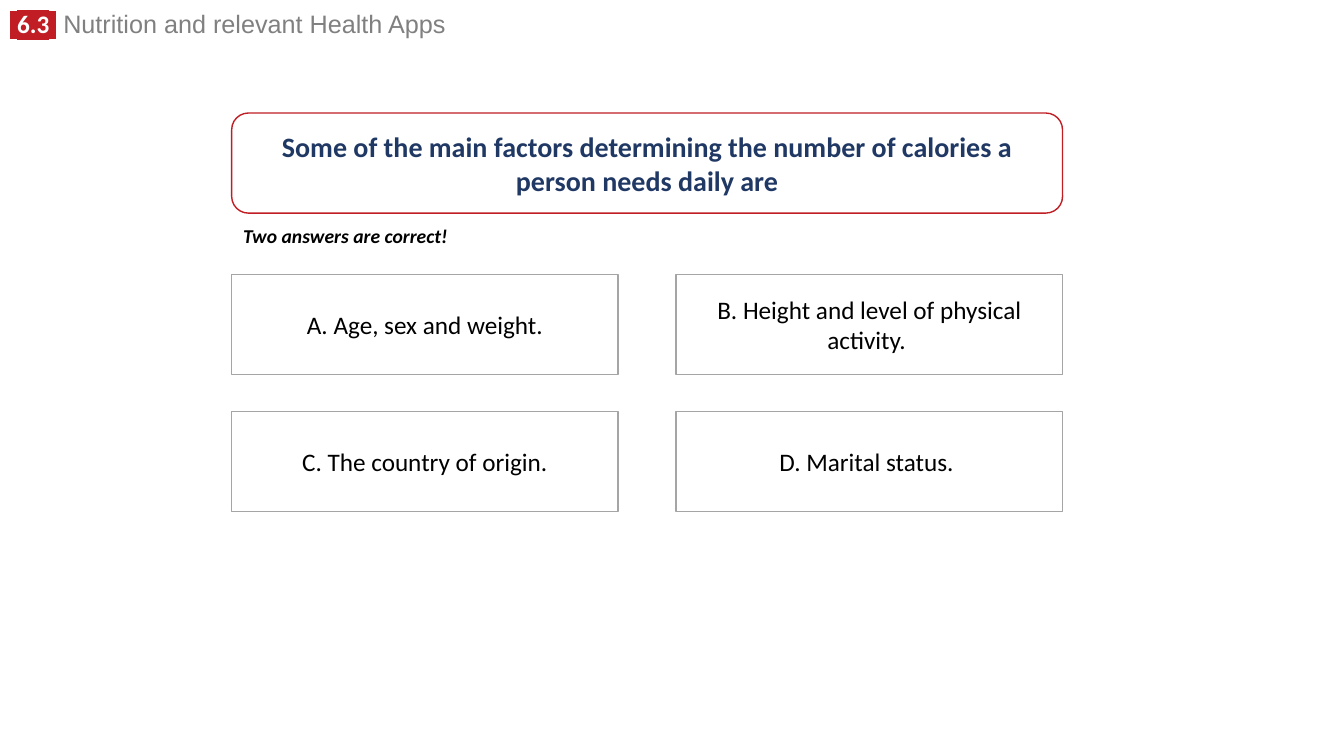
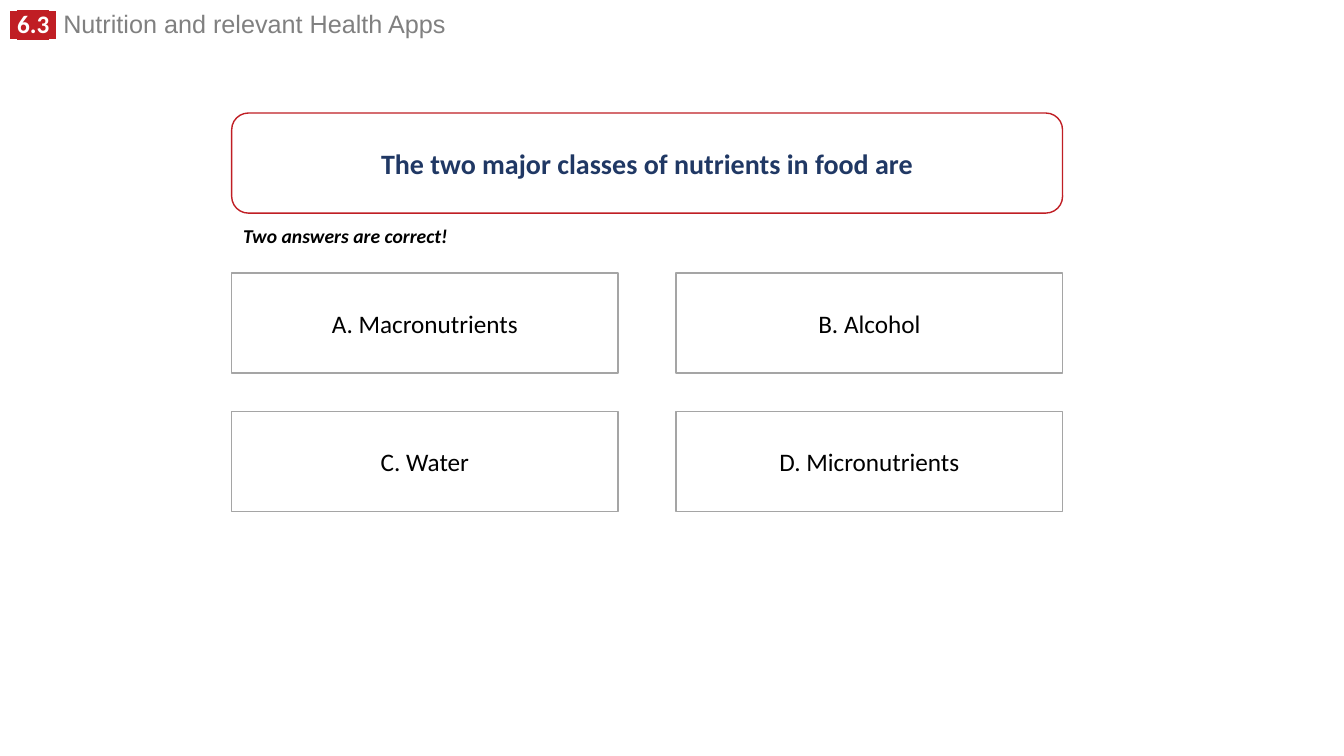
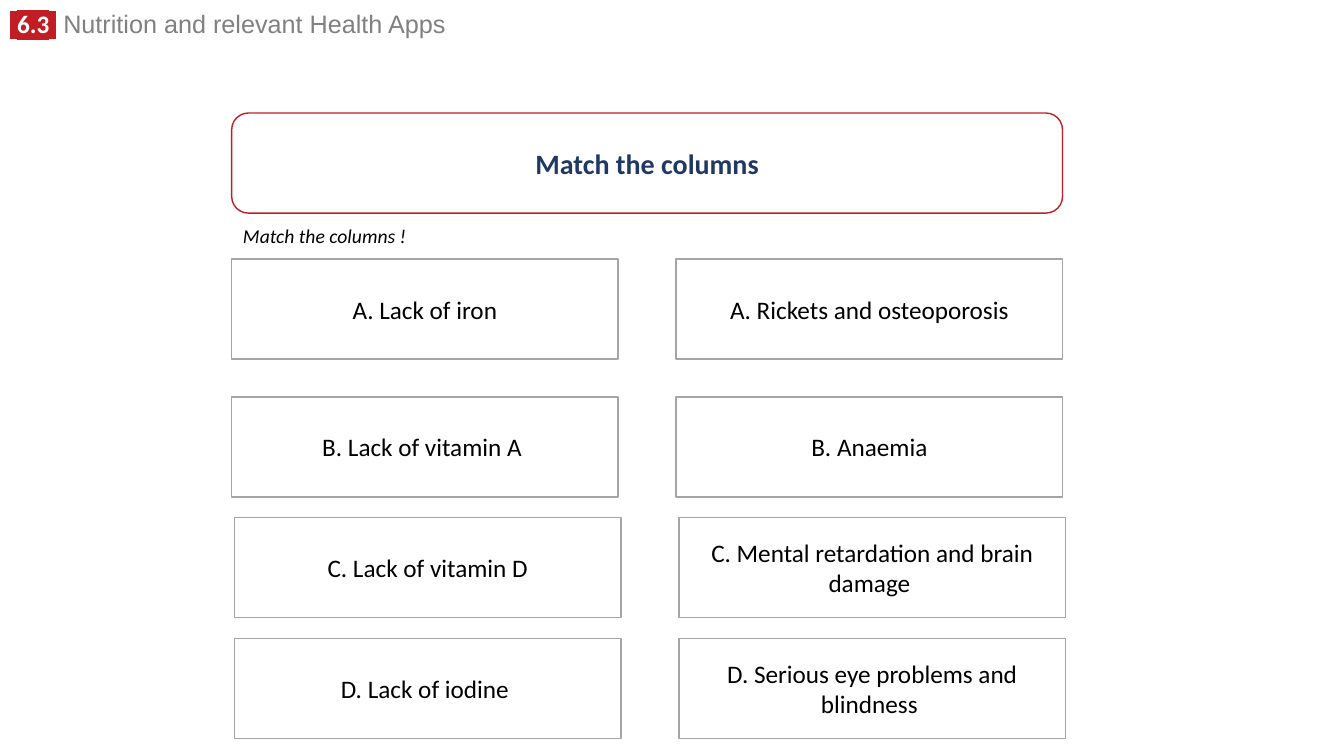
from pptx import Presentation
from pptx.dml.color import RGBColor
from pptx.enum.shapes import MSO_SHAPE
from pptx.enum.text import MSO_ANCHOR, MSO_AUTO_SIZE, PP_ALIGN
from pptx.oxml.ns import qn
from pptx.util import Pt

RED = RGBColor(0xC0, 0x1E, 0x24)
NAVY = RGBColor(0x20, 0x38, 0x64)
GREY = RGBColor(0x80, 0x80, 0x80)
BORDER = RGBColor(0xA5, 0xA5, 0xA5)
BLACK = RGBColor(0, 0, 0)
WHITE = RGBColor(0xFF, 0xFF, 0xFF)

# Shared grid, in points
LEFT = 165.5
BOX_WIDTH, BOX_HEIGHT = 276, 71.5
COLUMN_STEP = 317.5
QUESTION_WIDTH = COLUMN_STEP + BOX_WIDTH


class Quiz:
    """Holds the quiz style and the slide being built."""

    def __init__(self):
        self.deck = Presentation()
        self.deck.slide_width, self.deck.slide_height = Pt(960), Pt(540)
        self.slide = None

    def add_run(self, paragraph, text, size, color, font="Calibri",
                bold=False, italic=False, highlight=None):
        run = paragraph.add_run()
        run.text = text
        run.font.size, run.font.name = Pt(size), font
        run.font.bold, run.font.italic = bold, italic
        run.font.color.rgb = color
        if highlight is not None:
            fill = run.font._element.find(qn("a:solidFill"))
            mark = fill.makeelement(qn("a:highlight"), {})
            fill.addnext(mark)
            value = mark.makeelement(qn("a:srgbClr"), {"val": str(highlight)})
            mark.append(value)

    def start_slide(self):
        """Add a slide with the unit number and name as its title."""
        self.slide = self.deck.slides.add_slide(self.deck.slide_layouts[5])
        header = self.slide.shapes.title
        header.left, header.top = Pt(0), Pt(6.5)
        header.width, header.height = Pt(685.5), Pt(25)
        frame = header.text_frame
        frame.word_wrap = True
        frame.auto_size = MSO_AUTO_SIZE.SHAPE_TO_FIT_TEXT
        frame.vertical_anchor = MSO_ANCHOR.TOP
        paragraph = frame.paragraphs[0]
        paragraph.alignment = PP_ALIGN.LEFT
        paragraph.line_spacing = 0.8
        for text, font in ((" ", "Arial"), ("6.3", "Calibri"), (" ", "Arial")):
            self.add_run(paragraph, text, 18, WHITE, font, bold=True,
                         highlight=RED)
        self.add_run(paragraph, " Nutrition and relevant Health Apps", 18,
                     GREY, "Arial")

    def box(self, preset, left, top, width, border, text, size, color,
            bold=False):
        box = self.slide.shapes.add_shape(
            preset, Pt(left), Pt(top), Pt(width), Pt(BOX_HEIGHT))
        box.shadow.inherit = False
        box.fill.solid()
        box.fill.fore_color.rgb = WHITE
        box.line.color.rgb = border
        box.line.width = Pt(1)
        frame = box.text_frame
        frame.word_wrap = True
        frame.vertical_anchor = MSO_ANCHOR.MIDDLE
        paragraph = frame.paragraphs[0]
        paragraph.alignment = PP_ALIGN.CENTER
        self.add_run(paragraph, text, size, color, bold=bold)

    def question(self, text):
        self.box(MSO_SHAPE.ROUNDED_RECTANGLE, LEFT, 80.75, QUESTION_WIDTH,
                 RED, text, 20, NAVY, bold=True)

    def hint(self, text, width, bold):
        hint = self.slide.shapes.add_textbox(
            Pt(166.5), Pt(156.5), Pt(width), Pt(24.5))
        frame = hint.text_frame
        frame.word_wrap = False
        frame.auto_size = MSO_AUTO_SIZE.SHAPE_TO_FIT_TEXT
        self.add_run(frame.paragraphs[0], text, 14, BLACK, bold=bold,
                     italic=True)

    def answer_row(self, top, shift, answers):
        for column, answer in enumerate(answers):
            self.box(MSO_SHAPE.RECTANGLE, LEFT + shift + column * COLUMN_STEP,
                     top, BOX_WIDTH, BORDER, answer, 18, BLACK)


# Question, hint (text, width, bold), answer rows (top, shift, answers)
TWO_CORRECT = ("Two answers are correct!", 161.5, True)
QUESTIONS = [
    ("Some of the main factors determining the number of calories a person "
     "needs daily are", TWO_CORRECT, [
         (196, 0, ("A. Age, sex and weight.",
                   "B. Height and level of physical activity. ")),
         (294, 0, ("C. The country of origin.", "D. Marital status. ")),
     ]),
    ("The two major classes of nutrients in food are", TWO_CORRECT, [
        (195, 0, ("A. Macronutrients", "B. Alcohol")),
        (294, 0, ("C. Water", "D. Micronutrients")),
    ]),
    ("Match the columns", ("Match the columns !", 132.5, False), [
        (185, 0, ("A. Lack of iron", "A. Rickets and osteoporosis")),
        (283.5, 0, ("B. Lack of vitamin A ", "B. Anaemia")),
        (369.5, 2, ("C. Lack of vitamin D",
                    "C. Mental retardation and brain damage ")),
        (456, 2, ("D. Lack of iodine ",
                  "D. Serious eye problems and blindness ")),
    ]),
]


def main():
    quiz = Quiz()
    for question, hint, rows in QUESTIONS:
        quiz.start_slide()
        quiz.question(question)
        quiz.hint(*hint)
        for row in rows:
            quiz.answer_row(*row)
    quiz.deck.save("out.pptx")


if __name__ == "__main__":
    main()
